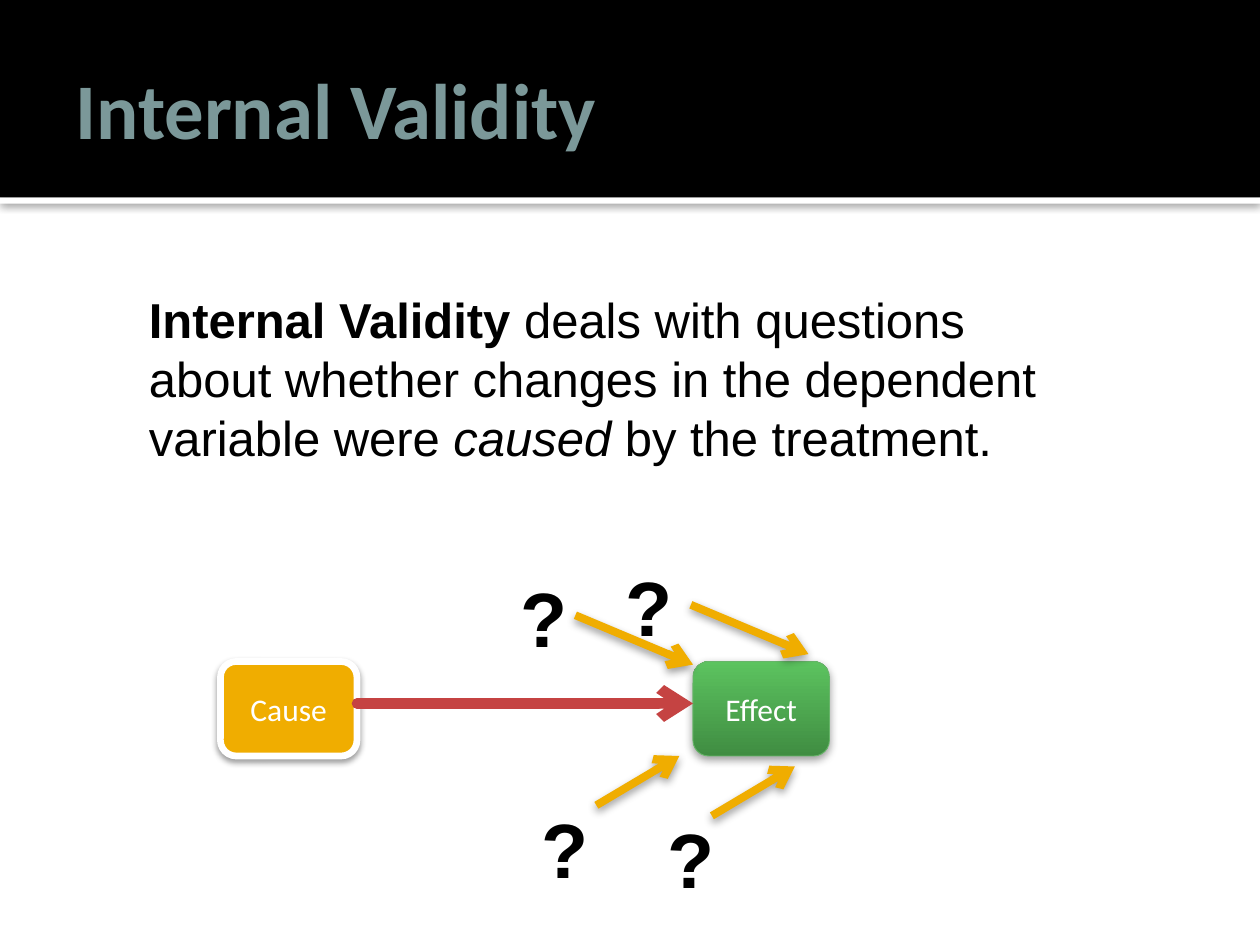
"""Build the Internal Validity slide on a grid of 120 columns by 90 rows."""
import dataclasses

import lxml.etree
import pptx
import pptx.dml.color
import pptx.enum.shapes
import pptx.enum.text
import pptx.oxml.ns
import pptx.util

RGBColor = pptx.dml.color.RGBColor
BLACK = RGBColor(0x00, 0x00, 0x00)
WHITE = RGBColor(0xFF, 0xFF, 0xFF)
TEAL = RGBColor(0x7B, 0x98, 0x99)
AMBER = RGBColor(0xF0, 0xAD, 0x00)
RED = RGBColor(0xC5, 0x43, 0x42)
DARK_GREEN = RGBColor(0x40, 0x8D, 0x42)
LIGHT_GREEN = RGBColor(0x5C, 0xC3, 0x5F)
EDGE_GREEN = RGBColor(0x67, 0xB5, 0x69)
COLUMNS, ROWS = 120, 90
SLIDE_WIDTH, SLIDE_HEIGHT = pptx.util.Inches(10), pptx.util.Inches(7.5)


@dataclasses.dataclass(frozen=True)
class Shadow:
    """A soft shadow falling straight down, in percent and points."""
    opacity: int
    blur: float
    distance: float


@dataclasses.dataclass(frozen=True)
class Node:
    """A labelled box in the cause and effect diagram."""
    label: str
    column: float
    fill: tuple[RGBColor, ...]
    edge: RGBColor
    edge_width: float
    shadow: Shadow


@dataclasses.dataclass(frozen=True)
class Doubt:
    """A question mark with an arrow that starts beside it."""
    column: float
    row: float
    arrow_offset: tuple[float, float]
    arrow_run: tuple[float, float]


RULE_SHADOW = Shadow(60, 5, 0.8)
RAISED_SHADOW = Shadow(38, 5, 2.1)
NODES = (
    Node("Cause", 21, (AMBER,), WHITE, 3.82, Shadow(38, 3.5, 2)),
    Node("Effect", 66, (DARK_GREEN, LIGHT_GREEN), EDGE_GREEN, 0.5, RAISED_SHADOW),
)
FALLING, RISING = (11.2, 4.7), (7.9, -4.7)
DOUBTS = (
    Doubt(49, 53, (5.8, 5.6), FALLING),
    Doubt(59, 52, (6.8, 5.6), FALLING),
    Doubt(51, 75, (5.8, 1.7), RISING),
    Doubt(63, 76, (4.8, 1.7), RISING),
)
STATEMENT = (
    ("Internal Validity ", True, False),
    ("deals with questions about whether changes in the dependent variable were ", False, False),
    ("caused", False, True),
    (" by the treatment.", False, False),
)


def across(columns: float) -> int:
    """Return the length of a number of columns."""
    return round(SLIDE_WIDTH * columns / COLUMNS)


def down(rows: float) -> int:
    """Return the length of a number of rows."""
    return round(SLIDE_HEIGHT * rows / ROWS)


def area(column: float, row: float, columns: float, rows: float) -> tuple[int, ...]:
    """Return left, top, width and height of a block of the grid."""
    return across(column), down(row), across(columns), down(rows)


def set_shadow(shape, shadow: Shadow | None) -> None:
    """Give a finished shape or connector its own shadow, or none."""
    name = pptx.oxml.ns.qn
    effects = lxml.etree.SubElement(shape.element.spPr, name("a:effectLst"))
    if shadow:
        outer = lxml.etree.SubElement(
            effects, name("a:outerShdw"), blurRad=str(pptx.util.Pt(shadow.blur)),
            dist=str(pptx.util.Pt(shadow.distance)), dir="5400000", rotWithShape="0")
        colour = lxml.etree.SubElement(outer, name("a:srgbClr"), val=str(BLACK))
        lxml.etree.SubElement(colour, name("a:alpha"), val=str(shadow.opacity * 1000))


def add_run(paragraph, text: str, font: str, size: float, colour: RGBColor,
            bold: bool = False, italic: bool = False) -> None:
    """Append one formatted run to a paragraph."""
    run = paragraph.add_run()
    run.text = text
    run.font.name, run.font.size = font, pptx.util.Pt(size)
    run.font.bold, run.font.italic = bold, italic
    run.font.color.rgb = colour


def add_band(slide, row: float, rows: float, colour: RGBColor, shadow: Shadow | None) -> None:
    """Draw a band over the full width of the slide."""
    band = slide.shapes.add_shape(
        pptx.enum.shapes.MSO_SHAPE.RECTANGLE, *area(0, row, COLUMNS, rows))
    band.fill.solid()
    band.fill.fore_color.rgb = colour
    band.line.fill.background()
    set_shadow(band, shadow)


def add_title(slide, text: str) -> None:
    """Format the title placeholder and bring it in front of the bands."""
    title = slide.shapes.title
    title.left, title.top, title.width, title.height = area(6, 2, 108, 16.5)
    title.text_frame.vertical_anchor = pptx.enum.text.MSO_ANCHOR.MIDDLE
    title.text_frame.auto_size = pptx.enum.text.MSO_AUTO_SIZE.NONE
    title.text_frame.margin_right = pptx.util.Inches(0.05)
    paragraph = title.text_frame.paragraphs[0]
    paragraph.alignment = pptx.enum.text.PP_ALIGN.LEFT
    add_run(paragraph, text, "Calibri", 45, TEAL, bold=True)
    title.element.getparent().append(title.element)


def add_statement(slide) -> None:
    """Write the definition below the header."""
    box = slide.shapes.add_textbox(*area(13, 27, 91, 18))
    box.text_frame.word_wrap = True
    for text, bold, italic in STATEMENT:
        add_run(box.text_frame.paragraphs[0], text, "Arial", 28, BLACK, bold, italic)


def add_node(slide, node: Node) -> None:
    """Draw a rounded box with a centred label."""
    box = slide.shapes.add_shape(
        pptx.enum.shapes.MSO_SHAPE.ROUNDED_RECTANGLE, *area(node.column, 63, 13, 9))
    if len(node.fill) == 1:
        box.fill.solid()
        box.fill.fore_color.rgb = node.fill[0]
    else:
        box.fill.gradient()
        box.fill.gradient_angle = 90
        for stop, colour in zip(box.fill.gradient_stops, node.fill):
            stop.color.rgb = colour
    box.line.color.rgb = node.edge
    box.line.width = pptx.util.Pt(node.edge_width)
    set_shadow(box, node.shadow)
    box.text_frame.vertical_anchor = pptx.enum.text.MSO_ANCHOR.MIDDLE
    paragraph = box.text_frame.paragraphs[0]
    paragraph.alignment = pptx.enum.text.PP_ALIGN.CENTER
    add_run(paragraph, node.label, "Calibri", 18, WHITE)


def add_arrow(shapes, start: tuple[float, float], run: tuple[float, float], colour: RGBColor,
              width: float, cap: str, shadow: Shadow | None) -> None:
    """Draw an arrow from a grid point along a run of columns and rows."""
    arrow = shapes.add_connector(
        pptx.enum.shapes.MSO_CONNECTOR.STRAIGHT, across(start[0]), down(start[1]),
        across(start[0] + run[0]), down(start[1] + run[1]))
    arrow.line.color.rgb = colour
    arrow.line.width = pptx.util.Pt(width)
    line = arrow.line.color and arrow.element.spPr.find(pptx.oxml.ns.qn("a:ln"))
    line.set("cap", cap)
    lxml.etree.SubElement(line, pptx.oxml.ns.qn("a:tailEnd"), type="arrow")
    set_shadow(arrow, shadow)


def add_doubt(slide, doubt: Doubt) -> None:
    """Group a question mark with its arrow."""
    shapes = slide.shapes.add_group_shape().shapes
    start = doubt.column + doubt.arrow_offset[0], doubt.row + doubt.arrow_offset[1]
    add_arrow(shapes, start, doubt.arrow_run, AMBER, 4.5, "flat", RAISED_SHADOW)
    mark = shapes.add_textbox(*area(doubt.column, doubt.row, 5.5, 10))
    frame = mark.text_frame
    frame.word_wrap = False
    frame.margin_left, frame.margin_top = across(0.6), down(1.3)
    frame.margin_right = frame.margin_bottom = 0
    add_run(frame.paragraphs[0], "?", "Arial", 44, BLACK, bold=True)


def main() -> None:
    """Build and save the presentation."""
    presentation = pptx.Presentation()
    presentation.slide_width, presentation.slide_height = SLIDE_WIDTH, SLIDE_HEIGHT
    slide = presentation.slides.add_slide(presentation.slide_layouts[5])
    add_band(slide, 18.8, 0.6, WHITE, RULE_SHADOW)
    add_band(slide, 0, 18.8, BLACK, None)
    add_title(slide, "Internal Validity")
    add_statement(slide)
    for node in NODES:
        add_node(slide, node)
    add_arrow(slide.shapes, (34, 67), (32, 0), RED, 6, "rnd", None)
    for doubt in DOUBTS:
        add_doubt(slide, doubt)
    presentation.save("out.pptx")


if __name__ == "__main__":
    main()
